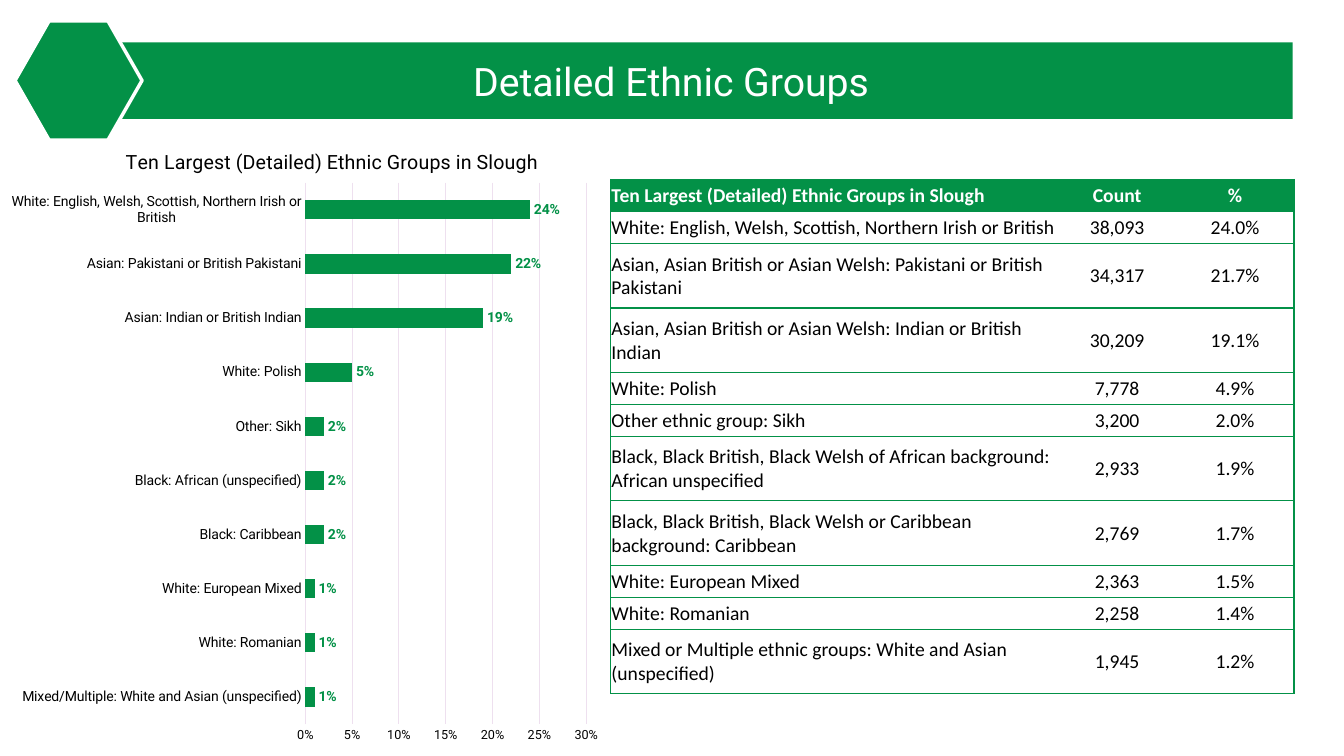
from lxml.etree import SubElement
from pptx import Presentation
from pptx.chart.data import CategoryChartData
from pptx.dml.color import RGBColor
from pptx.enum.chart import XL_CHART_TYPE as ChartType, XL_LABEL_POSITION as LabelPosition, XL_TICK_MARK as TickMark
from pptx.enum.shapes import MSO_SHAPE as Preset
from pptx.enum.text import MSO_ANCHOR as Anchor, PP_ALIGN as Align
from pptx.oxml import parse_xml
from pptx.oxml.ns import nsdecls, qn
from pptx.util import Cm, Pt

GREEN, WHITE, BLACK, GRID = "039147", "FFFFFF", "000000", "EEE0EF"
HEADING = "Ten Largest (Detailed) Ethnic Groups in Slough"
SHARES = [
    ("White: English, Welsh, Scottish, Northern Irish or British", 0.24),
    ("Asian: Pakistani or British Pakistani", 0.22),
    ("Asian: Indian or British Indian", 0.19),
    ("White: Polish", 0.05),
    ("Other: Sikh", 0.02),
    ("Black: African (unspecified)", 0.02),
    ("Black: Caribbean", 0.02),
    ("White: European Mixed", 0.01),
    ("White: Romanian", 0.01),
    ("Mixed/Multiple: White and Asian (unspecified)", 0.01),
]
COUNTS = [
    (HEADING, "Count", "%"),
    ("White: English, Welsh, Scottish, Northern Irish or British", "38,093", "24.0%"),
    ("Asian, Asian British or Asian Welsh: Pakistani or British Pakistani", "34,317", "21.7%"),
    ("Asian, Asian British or Asian Welsh: Indian or British Indian", "30,209", "19.1%"),
    ("White: Polish", "7,778", "4.9%"),
    ("Other ethnic group: Sikh", "3,200", "2.0%"),
    ("Black, Black British, Black Welsh of African background: African unspecified", "2,933", "1.9%"),
    ("Black, Black British, Black Welsh or Caribbean background: Caribbean", "2,769", "1.7%"),
    ("White: European Mixed", "2,363", "1.5%"),
    ("White: Romanian", "2,258", "1.4%"),
    ("Mixed or Multiple ethnic groups: White and Asian (unspecified)", "1,945", "1.2%"),
]
LINE_LIMIT = 58


def color(value):
    """Turn a hex string into a colour."""
    return RGBColor.from_string(value)


def style_font(font, name, size, shade, bold=False):
    """Set the face, size, colour and weight of a font."""
    font.name, font.size, font.bold = name, Pt(size), bold
    font.color.rgb = color(shade)


def add_green_shape(slide, preset, left, top, width, height):
    """Add a flat green shape and return it."""
    shape = slide.shapes.add_shape(preset, Cm(left), Cm(top), Cm(width), Cm(height))
    shape.shadow.inherit = False
    shape.fill.solid()
    shape.fill.fore_color.rgb = color(GREEN)
    return shape


def add_banner(slide, left, top, width, height):
    """Add the title bar."""
    banner = add_green_shape(slide, Preset.RECTANGLE, left, top, width, height)
    banner.line.fill.background()
    frame = banner.text_frame
    frame.text = "Detailed Ethnic Groups"
    frame.vertical_anchor = Anchor.MIDDLE
    para = frame.paragraphs[0]
    para.alignment = Align.CENTER
    style_font(para.runs[0].font, "Roboto", 28, WHITE)


def add_badge(slide, left, top, width, height):
    """Add the outlined hexagon over the start of the title bar."""
    badge = add_green_shape(slide, Preset.HEXAGON, left, top, width, height)
    badge.adjustments[0] = 0.286
    badge.line.color.rgb = color(WHITE)
    badge.line.width = Pt(2.5)


def manual_layout(**settings):
    """Build a chart layout from its settings, in order."""
    layout = parse_xml(f"<c:layout {nsdecls('c')}><c:manualLayout/></c:layout>")
    for name, value in settings.items():
        SubElement(layout[0], qn(f"c:{name}")).set("val", str(value))
    return layout


def style_axis(axis, size):
    """Give an axis its labels and remove its tick marks."""
    axis.major_tick_mark = axis.minor_tick_mark = TickMark.NONE
    style_font(axis.tick_labels.font, "Roboto", size, BLACK)


def add_share_chart(slide, left, top, width, height):
    """Add the bar chart of shares, largest group at the top."""
    data = CategoryChartData(number_format="0%")
    names, values = zip(*reversed(SHARES))
    data.categories = names
    data.add_series("Series 1", values)
    chart = slide.shapes.add_chart(
        ChartType.BAR_CLUSTERED, Cm(left), Cm(top), Cm(width), Cm(height), data).chart
    chart.has_legend = False
    style_font(chart.font, "Roboto", 10, BLACK)

    title = chart.chart_title
    title.text_frame.text = HEADING
    style_font(title.text_frame.paragraphs[0].runs[0].font, "Roboto", 14, BLACK)
    title.include_in_layout = False
    title_layout = manual_layout(xMode="edge", yMode="edge", x=0.2, y=0.04)
    title_xml = chart.element.find(".//" + qn("c:title"))
    for old in title_xml.findall(qn("c:layout")):
        title_xml.remove(old)
    title_xml.find(qn("c:tx")).addnext(title_layout)

    plot_xml = chart.element.find(".//" + qn("c:plotArea"))
    for old in plot_xml.findall(qn("c:layout")):
        plot_xml.remove(old)
    plot_xml.insert(0, manual_layout(
        layoutTarget="inner", xMode="edge", yMode="edge", x=0.5, y=0.1, w=0.46, h=0.85))

    groups, shares = chart.category_axis, chart.value_axis
    style_axis(groups, 10)
    style_axis(shares, 9)
    shares.minimum_scale, shares.maximum_scale, shares.major_unit = 0, 0.3, 0.05
    shares.tick_labels.number_format = "0%"
    shares.tick_labels.number_format_is_linked = False
    shares.format.line.fill.background()
    for line in (groups.format.line, shares.major_gridlines.format.line):
        line.color.rgb = color(GRID)
        line.width = Pt(0.75)

    plot = chart.plots[0]
    plot.gap_width = 182
    plot.vary_by_categories = False
    bars = plot.series[0]
    bars.format.fill.solid()
    bars.format.fill.fore_color.rgb = color(GREEN)
    labels = bars.data_labels
    labels.show_value = True
    labels.position = LabelPosition.OUTSIDE_END
    labels.number_format, labels.number_format_is_linked = "0%", False
    style_font(labels.font, "Roboto", 10, GREEN, bold=True)


def set_borders(cell, sides):
    """Draw green borders on the given sides and clear the others."""
    properties = cell._tc.get_or_add_tcPr()
    for side in "LRTB":
        line = SubElement(properties, qn(f"a:ln{side}"), w=str(Pt(1)))
        if side in sides:
            fill = SubElement(line, qn("a:solidFill"))
            SubElement(fill, qn("a:srgbClr"), val=GREEN)
        else:
            SubElement(line, qn("a:noFill"))


def fill_cell(cell, text, is_header, column):
    """Write and style one table cell."""
    set_borders(cell, ("LTB", "TB", "RTB")[column])
    if is_header:
        cell.fill.solid()
        cell.fill.fore_color.rgb = color(GREEN)
    else:
        cell.fill.background()
    cell.margin_left = cell.margin_right = cell.margin_top = Cm(0.02)
    cell.margin_bottom = 0
    cell.vertical_anchor = Anchor.MIDDLE
    cell.text_frame.text = text
    para = cell.text_frame.paragraphs[0]
    para.alignment = Align.CENTER if column else Align.LEFT
    style_font(para.runs[0].font, "Calibri", 14, WHITE if is_header else BLACK, is_header)


def add_count_table(slide, left, top, width, row_height):
    """Add the table of counts, with double rows for long names."""
    number_width = 2.97
    widths = (width - 2 * number_width, number_width, number_width)
    heights = [row_height * (2 if len(row[0]) > LINE_LIMIT else 1) for row in COUNTS]
    table = slide.shapes.add_table(
        len(COUNTS), len(widths), Cm(left), Cm(top), Cm(width), Cm(sum(heights))).table
    table.horz_banding = False
    for column, column_width in zip(table.columns, widths):
        column.width = Cm(column_width)
    for row_index, (texts, height) in enumerate(zip(COUNTS, heights)):
        table.rows[row_index].height = Cm(height)
        for column_index, text in enumerate(texts):
            fill_cell(table.cell(row_index, column_index), text, row_index == 0, column_index)


def main():
    """Build the slide and save it."""
    deck = Presentation()
    deck.slide_width, deck.slide_height = Cm(33.87), Cm(19.05)
    slide = deck.slides.add_slide(deck.slide_layouts[6])
    add_banner(slide, 1.24, 1.07, 31.34, 1.93)
    add_share_chart(slide, 0, 3, 15.39, 16.05)
    add_count_table(slide, 15.39, 4.52, 17.22, 0.81)
    add_badge(slide, 0.38, 0.53, 3.2, 3)
    deck.save("out.pptx")


if __name__ == "__main__":
    main()
